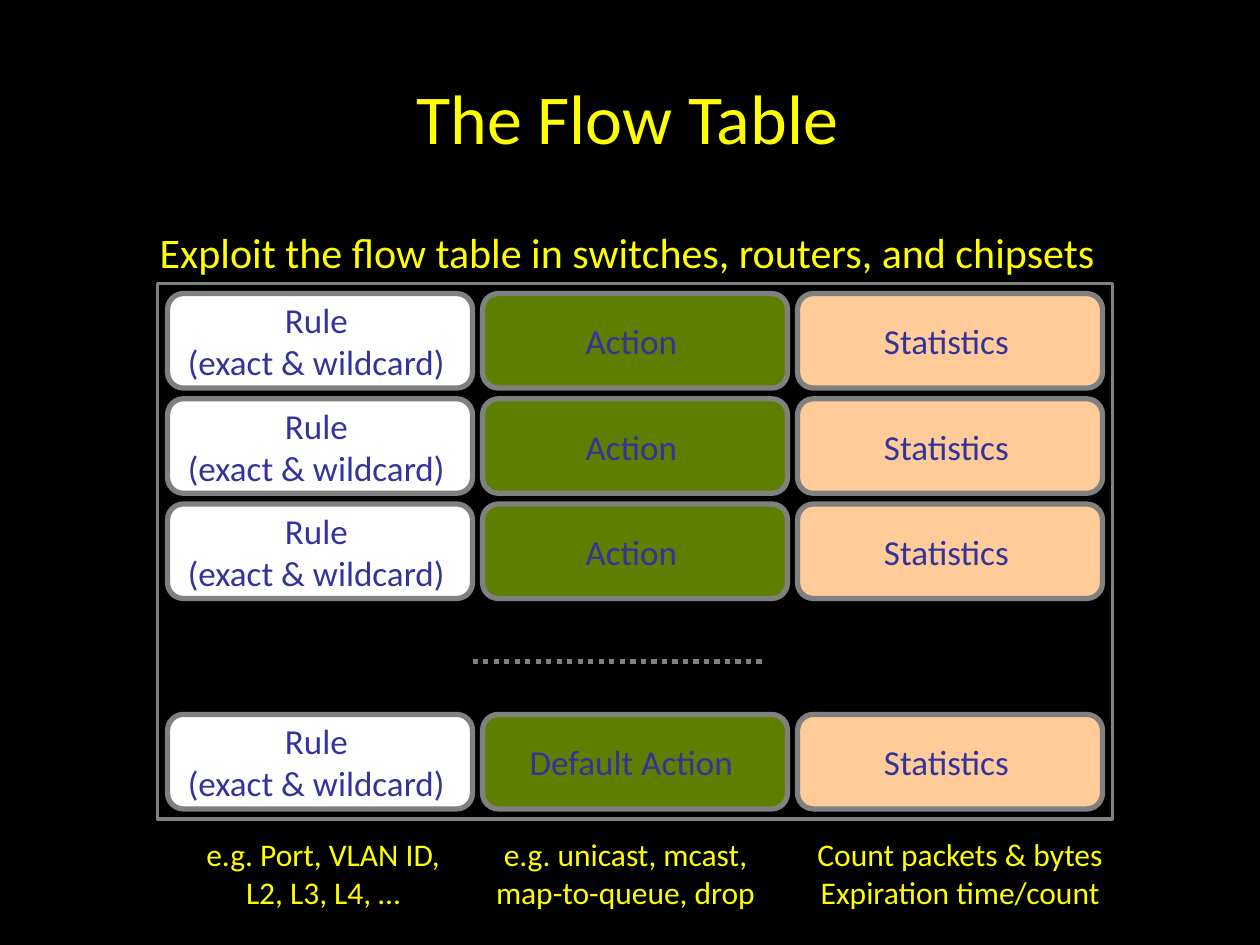
from lxml import etree
from pptx import Presentation
from pptx.dml.color import RGBColor
from pptx.enum import dml, shapes, text
from pptx.oxml import ns
from pptx.util import Inches, Pt

BLACK = RGBColor(0x00, 0x00, 0x00)
YELLOW = RGBColor(0xFF, 0xFF, 0x00)
WHITE = RGBColor(0xFF, 0xFF, 0xFF)
GREEN = RGBColor(0x99, 0xCC, 0x00)
PEACH = RGBColor(0xFF, 0xCC, 0x99)
GRAY = RGBColor(0x80, 0x80, 0x80)
INDIGO = RGBColor(0x33, 0x33, 0x99)


def write(shape, words, size, color, insets, anchor, wrap=True):
    """Fill a shape with centred text; insets are left, top, right, bottom in inches."""
    frame = shape.text_frame
    frame.text = words
    frame.word_wrap = wrap
    frame.vertical_anchor = anchor
    (frame.margin_left, frame.margin_top,
     frame.margin_right, frame.margin_bottom) = map(Inches, insets)
    for para in frame.paragraphs:
        para.alignment = text.PP_ALIGN.CENTER
        for span in para.runs:
            span.font.name = "Calibri"
            span.font.size = Pt(size)
            span.font.color.rgb = color


def add_box(kind, left, top, width, height, line_width):
    box = page.shapes.add_shape(
        kind, Inches(left), Inches(top), Inches(width), Inches(height))
    box.shadow.inherit = False
    box.line.color.rgb = GRAY
    box.line.width = Pt(line_width)
    return box


deck = Presentation()
deck.slide_width, deck.slide_height = Inches(10), Inches(7.5)
page = deck.slides.add_slide(deck.slide_layouts[6])
page.background.fill.solid()
page.background.fill.fore_color.rgb = BLACK

# Title and subtitle
title = page.shapes.add_textbox(Inches(0.5), Inches(0.3), Inches(9), Inches(1.25))
write(title, "The Flow Table", 40, YELLOW, (0.1, 0.05, 0.14, 0.05),
      text.MSO_ANCHOR.MIDDLE)
subtitle = page.shapes.add_textbox(Inches(0.5), Inches(1.75), Inches(9), Inches(0.5))
write(subtitle, "Exploit the flow table in switches, routers, and chipsets", 24,
      YELLOW, (0.1, 0.05, 0.14, 0.05), text.MSO_ANCHOR.TOP)
subtitle.text_frame.paragraphs[0].space_before = Pt(4.8)

# Table frame
table_frame = add_box(shapes.MSO_SHAPE.RECTANGLE, 1.25, 2.25, 7.58, 4.25, 2)
table_frame.fill.background()

# Flow entries: the default entry sits one row below the dotted gap
for row in (0, 1, 2, 4):
    action = "Default Action" if row == 4 else "Action"
    entry = (("Rule\n(exact & wildcard)", WHITE), (action, GREEN), ("Statistics", PEACH))
    for column, (label, color) in enumerate(entry):
        cell = add_box(shapes.MSO_SHAPE.ROUNDED_RECTANGLE,
                       1.33 + 2.5 * column, 2.33 + 0.835 * row, 2.42, 0.75, 3)
        cell.fill.solid()
        cell.fill.fore_color.rgb = color
        if color == GREEN:
            fill_color = cell.fill._xPr.find(f".//{ns.qn('a:srgbClr')}")
            etree.SubElement(fill_color, ns.qn("a:alpha"), val="62000")
        write(cell, label, 20, INDIGO, (0.04, 0.04, 0.1, 0.04),
              text.MSO_ANCHOR.MIDDLE, wrap=False)

# Dotted line for the entries left out
more_entries = page.shapes.add_connector(
    shapes.MSO_CONNECTOR.STRAIGHT, Inches(3.75), Inches(5.25), Inches(6.08), Inches(5.25))
more_entries.line.color.rgb = GRAY
more_entries.line.width = Pt(3)
more_entries.line.dash_style = dml.MSO_LINE.ROUND_DOT
etree.SubElement(more_entries._element.spPr, ns.qn("a:effectLst"))

# Examples under each column
examples = (
    (1.42, 2.29, "e.g. Port, VLAN ID,\nL2, L3, L4, …"),
    (3.75, 2.43, "e.g. unicast, mcast,\nmap-to-queue, drop"),
    (6.08, 3.08, "Count packets & bytes\nExpiration time/count"),
)
for left, width, words in examples:
    example = page.shapes.add_textbox(
        Inches(left), Inches(6.58), Inches(width), Inches(0.71))
    write(example, words, 18, YELLOW, (0.1, 0.05, 0.1, 0.05), text.MSO_ANCHOR.TOP)

deck.save("out.pptx")
